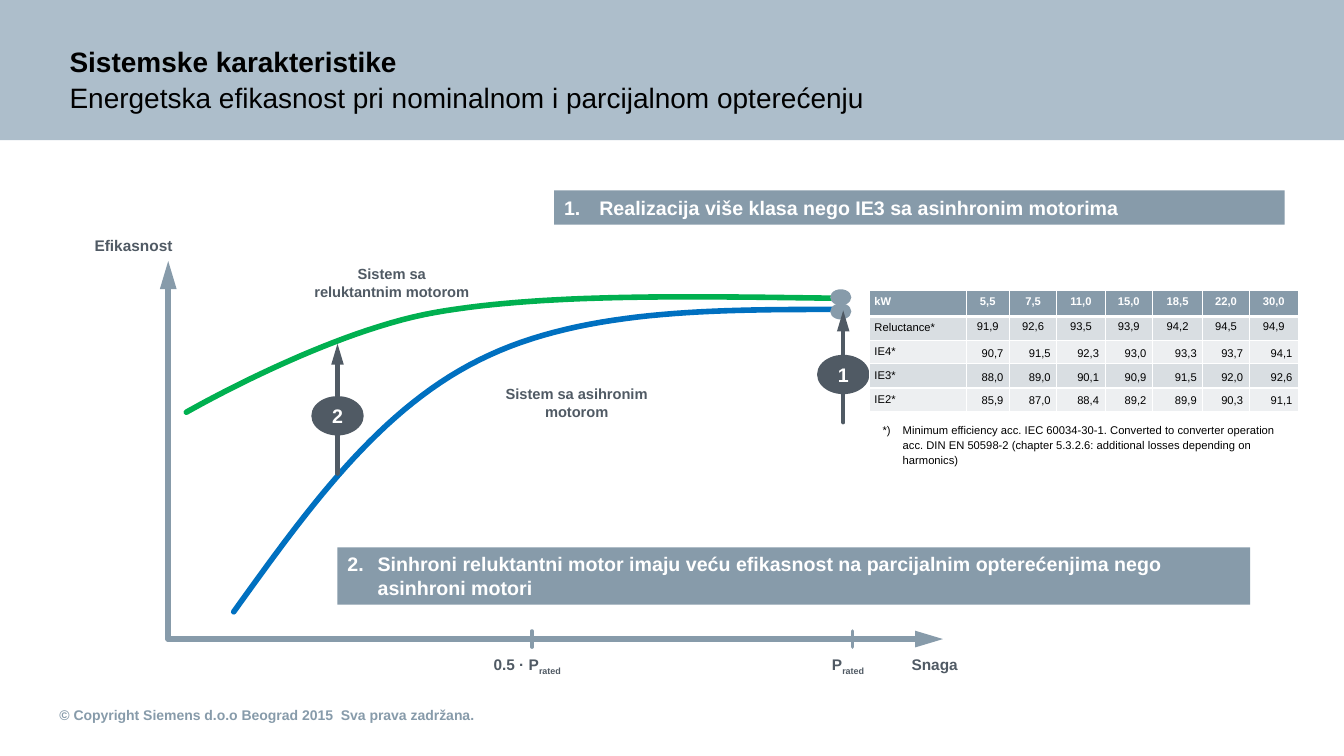
from lxml.etree import SubElement
from pptx import Presentation
from pptx.dml.color import RGBColor
from pptx.enum.shapes import MSO_CONNECTOR, MSO_SHAPE
from pptx.enum.text import MSO_ANCHOR, MSO_AUTO_SIZE, PP_ALIGN
from pptx.oxml.ns import qn
from pptx.util import Inches, Pt

# Content
BAND, STEEL, SLATE = "ADBECB", "879BAA", "505A64"
GREEN, BLUE, WHITE, BLACK = "00B050", "0070C0", "FFFFFF", "000000"
STRIPES = ["D9DEE2", "EDEFF1"]

TITLE = [("Sistemske karakteristike\n", {"bold": True}),
         ("Energetska efikasnost pri nominalnom i parcijalnom opterećenju", {"bold": False})]
COPYRIGHT = "© Copyright Siemens d.o.o Beograd 2015  Sva prava zadržana."
FOOTNOTE = ("*)\tMinimum efficiency acc. IEC 60034-30-1. Converted to converter operation acc. "
            "DIN EN 50598-2 (chapter 5.3.2.6: additional losses depending on harmonics)")

# text, box, hanging indent
STATEMENTS = [
    ("1.\tRealizacija više klasa nego IE3 sa asinhronim motorima", (5.5, 1.89, 7.25, 0.34), 0.35),
    ("2.\tSinhroni reluktantni motor imaju veću efikasnost na parcijalnim opterećenjima "
     "nego asinhroni motori", (3.35, 5.43, 9.06, 0.57), 0.3),
]
RATED = ("rated", {"subscript": True})
AXIS_LABELS = [
    ("Efikasnost", (0.84, 2.29, 0.98, 0.29)),
    ([("0.5 · P", {}), RATED], (4.8, 6.45, 0.91, 0.29)),
    ([("P", {}), RATED], (8.16, 6.45, 0.56, 0.29)),
    ("Snaga", (8.95, 6.45, 0.67, 0.29)),
]
CURVE_LABELS = [
    ("Sistem sa\nreluktantnim motorom", (3.01, 2.58, 1.76, 0.45)),
    ("Sistem sa asihronim\nmotorom", (4.91, 3.77, 1.63, 0.45)),
]
# colour, start point, cubic segments as (control, control, end)
CURVES = [
    (GREEN, (8.35, 2.96), [((6.88, 2.94), (5.4, 2.91), (4.32, 3.1)),
                           ((3.24, 3.29), (1.85, 4.09), (1.85, 4.09))]),
    (BLUE, (8.35, 3.07), [((7.06, 3.07), (5.76, 3.07), (4.76, 3.57)),
                          ((3.75, 4.07), (3.04, 5.07), (2.32, 6.07))]),
]
ORIGIN_X, AXIS_Y = 1.67, 6.34
TICKS = [5.28, 8.46]
# number, x, foot of arrow, tip of arrow, centre of badge
GAINS = [("1", 8.37, 4.19, 3.08, 3.72), ("2", 3.35, 4.7, 3.41, 4.13)]
RATED_POINTS = [3.01, 2.87]

EFFICIENCY = [
    ("kW", "5,5", "7,5", "11,0", "15,0", "18,5", "22,0", "30,0"),
    ("Reluctance*", "91,9", "92,6", "93,5", "93,9", "94,2", "94,5", "94,9"),
    ("IE4*", "90,7", "91,5", "92,3", "93,0", "93,3", "93,7", "94,1"),
    ("IE3*", "88,0", "89,0", "90,1", "90,9", "91,5", "92,0", "92,6"),
    ("IE2*", "85,9", "87,0", "88,4", "89,2", "89,9", "90,3", "91,1"),
]
COLUMN_WIDTHS = [0.96, 0.43, 0.47, 0.48, 0.47, 0.5, 0.46, 0.49]
ROW_HEIGHTS = [0.26, 0.24, 0.23, 0.24, 0.23]


def rgb(value):
    return RGBColor.from_string(value)


def write(holder, text, size=11, color=SLATE, bold=True, align=PP_ALIGN.LEFT, anchor=MSO_ANCHOR.TOP,
          margins=(0.1, 0.05, 0.1, 0.05), wrap=True, hanging=0, spacing=None):
    """Fill a shape or table cell; text is a string or a list of (text, format) runs."""
    holder_frame = holder.text_frame
    if hasattr(holder, "shape_type"):
        holder_frame.auto_size = MSO_AUTO_SIZE.NONE
        holder_frame.word_wrap = wrap
        box = holder_frame
    else:
        box = holder
    box.vertical_anchor = anchor
    box.margin_left, box.margin_top, box.margin_right, box.margin_bottom = map(Inches, margins)
    paragraph = holder_frame.paragraphs[0]
    paragraph.alignment = align
    if spacing:
        paragraph.line_spacing = spacing
    if hanging:
        properties = paragraph._p.get_or_add_pPr()
        properties.set("marL", str(Inches(hanging)))
        properties.set("indent", str(-Inches(hanging)))
    for words, extra in [(text, {})] if isinstance(text, str) else text:
        for number, line in enumerate(words.split("\n")):
            if number:
                paragraph.add_line_break()
            if not line:
                continue
            run = paragraph.add_run()
            run.text = line
            run.font.name, run.font.size = "Arial", Pt(size)
            run.font.bold = extra.get("bold", bold)
            run.font.color.rgb = rgb(color)
            if extra.get("subscript"):
                run.font._element.set("baseline", "-25000")


def add_label(text, box, **format):
    write(slide.shapes.add_textbox(*map(Inches, box)), text, **format)


def add_filled(kind, box, color):
    shape = slide.shapes.add_shape(kind, *map(Inches, box))
    shape.shadow.inherit = False
    shape.fill.solid()
    shape.fill.fore_color.rgb = rgb(color)
    shape.line.fill.background()
    return shape


def add_line(start, end, color, width, arrow=False):
    line = slide.shapes.add_connector(MSO_CONNECTOR.STRAIGHT, *map(Inches, start + end))
    line.line.color.rgb = rgb(color)
    line.line.width = Pt(width)
    outline = line.line._get_or_add_ln()
    outline.set("cap", "rnd")
    if arrow:
        SubElement(outline, qn("a:tailEnd"), type="triangle", w="med", len="lg")
    SubElement(line._element.spPr, qn("a:effectLst"))


def add_curve(color, start, segments, steps=30):
    points, begin = [], start
    for first, second, end in segments:
        for step in range(1, steps + 1):
            t = step / steps
            weights = ((1 - t) ** 3, 3 * t * (1 - t) ** 2, 3 * t * t * (1 - t), t ** 3)
            points.append(tuple(Inches(sum(w * p[axis] for w, p in zip(weights, (begin, first, second, end))))
                                for axis in (0, 1)))
        begin = end
    builder = slide.shapes.build_freeform(Inches(start[0]), Inches(start[1]))
    builder.add_line_segments(points, close=False)
    curve = builder.convert_to_shape()
    curve.shadow.inherit = False
    curve.fill.background()
    curve.line.color.rgb = rgb(color)
    curve.line.width = Pt(4)
    curve.line._get_or_add_ln().set("cap", "rnd")


def add_border(cell, side, width):
    border = SubElement(cell._tc.get_or_add_tcPr(), qn(f"a:ln{side}"), w=str(Pt(width)))
    SubElement(SubElement(border, qn("a:solidFill")), qn("a:srgbClr"), val=WHITE)


deck = Presentation()
deck.slide_width, deck.slide_height = Inches(13.34), Inches(7.5)
slide = deck.slides.add_slide(deck.slide_layouts[5])

# Title on its band, and the copyright line
title = slide.shapes.title
title.left, title.top, title.width, title.height = map(Inches, (0, 0, 13.34, 1.39))
write(title, TITLE, size=20, color=BLACK, anchor=MSO_ANCHOR.BOTTOM,
      margins=(0.69, 0.43, 2.32, 0.26), spacing=1.06)
title_band = add_filled(MSO_SHAPE.RECTANGLE, (0, 0, 13.34, 1.39), BAND)
title._element.addprevious(title_band._element)
add_label(COPYRIGHT, (0, 6.78, 10, 0.47), size=10, color=STEEL, anchor=MSO_ANCHOR.MIDDLE,
          margins=(0.59, 0.16, 2.32, 0))

# Axes, curves and rated points
add_line((ORIGIN_X, AXIS_Y), (ORIGIN_X, 2.59), STEEL, 4, arrow=True)
add_line((ORIGIN_X, AXIS_Y), (9.36, AXIS_Y), STEEL, 4, arrow=True)
for tick_x in TICKS:
    add_line((tick_x, AXIS_Y - 0.08), (tick_x, AXIS_Y + 0.08), STEEL, 2.5)
for curve_content in CURVES:
    add_curve(*curve_content)
for point_y in RATED_POINTS:
    add_filled(MSO_SHAPE.OVAL, (8.24, point_y, 0.21, 0.16), STEEL)

# Numbered arrows between the curves
for number, x, foot, tip, middle in GAINS:
    add_line((x, foot), (x, tip), SLATE, 3, arrow=True)
    badge = add_filled(MSO_SHAPE.OVAL, (x - 0.26, middle - 0.2, 0.52, 0.39), SLATE)
    write(badge, number, size=14, color=WHITE, align=PP_ALIGN.CENTER, anchor=MSO_ANCHOR.MIDDLE,
          margins=(0, 0, 0, 0))

# Statements and labels
for text, box, hanging in STATEMENTS:
    write(add_filled(MSO_SHAPE.RECTANGLE, box, STEEL), text, size=14, color=WHITE, hanging=hanging)
for text, box in AXIS_LABELS:
    add_label(text, box, wrap=False)
for text, box in CURVE_LABELS:
    add_label(text, box, size=10.5, align=PP_ALIGN.CENTER, wrap=False)

# Efficiency table and its footnote
table = slide.shapes.add_table(len(EFFICIENCY), len(COLUMN_WIDTHS), Inches(8.63), Inches(2.88),
                               Inches(sum(COLUMN_WIDTHS)), Inches(sum(ROW_HEIGHTS))).table
for column, width in zip(table.columns, COLUMN_WIDTHS):
    column.width = Inches(width)
for r, values in enumerate(EFFICIENCY):
    table.rows[r].height = Inches(ROW_HEIGHTS[r])
    for c, value in enumerate(values):
        cell = table.cell(r, c)
        for side in "LRTB":
            add_border(cell, side, 3 if (r, side) in ((0, "B"), (1, "T")) else 1)
        cell.fill.solid()
        cell.fill.fore_color.rgb = rgb(STRIPES[(r - 1) % 2] if r else STEEL)
        style = {"size": 8, "color": BLACK if r else WHITE, "bold": r == 0, "margins": (0.05,) * 4}
        if c and r < 2:
            style.update(align=PP_ALIGN.CENTER, margins=(0.05, 0.05 - 0.01 * r) * 2)
        elif c:
            style.update(align=PP_ALIGN.RIGHT, anchor=MSO_ANCHOR.BOTTOM, spacing=1.1,
                         margins=(0.06, 0.04) * 2)
        write(cell, value, **style)
add_label(FOOTNOTE, (8.76, 4.19, 3.99, 0.44), size=8, color=BLACK, bold=False, hanging=0.2,
          spacing=1.1, margins=(0, 0, 0, 0))

deck.save("out.pptx")
